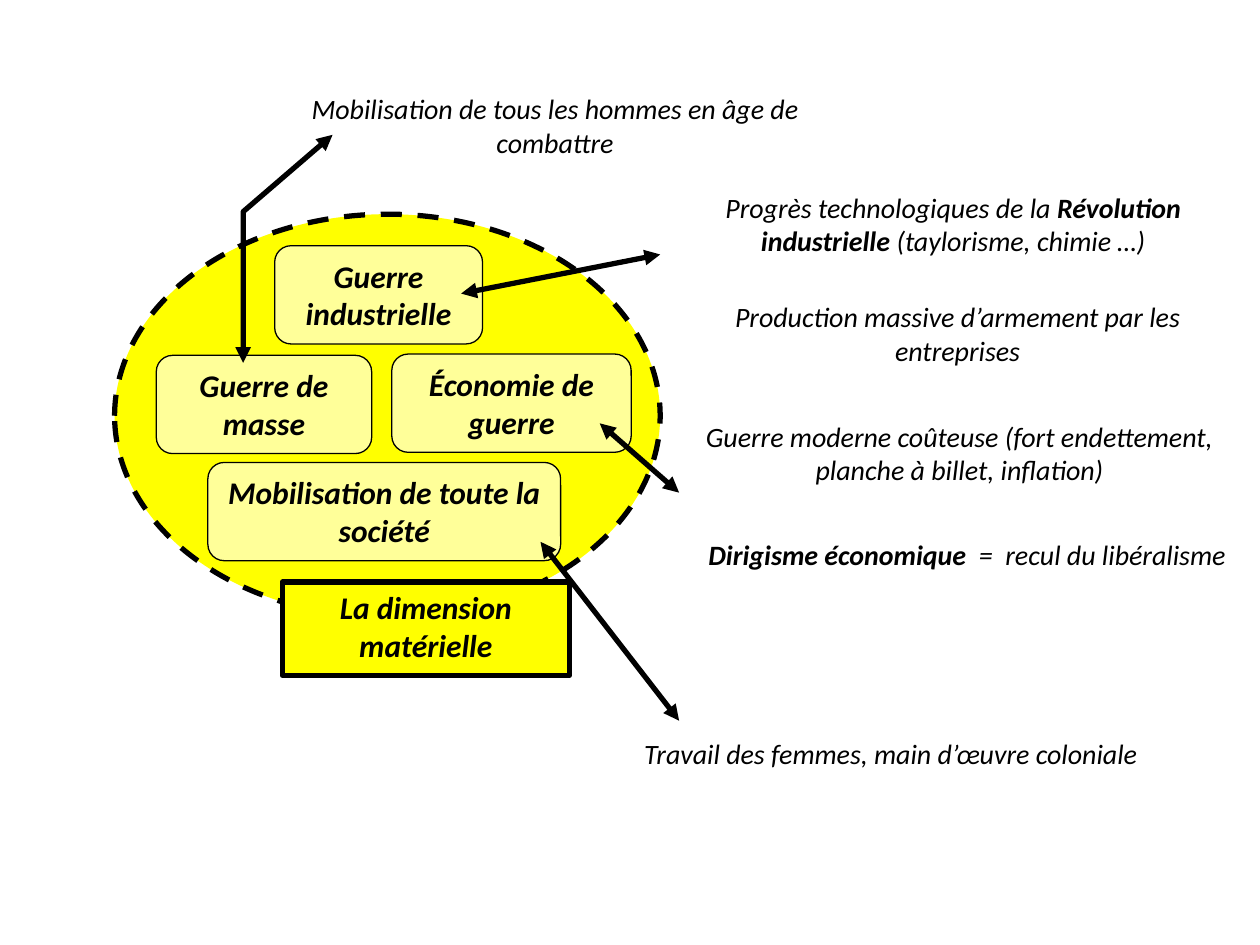
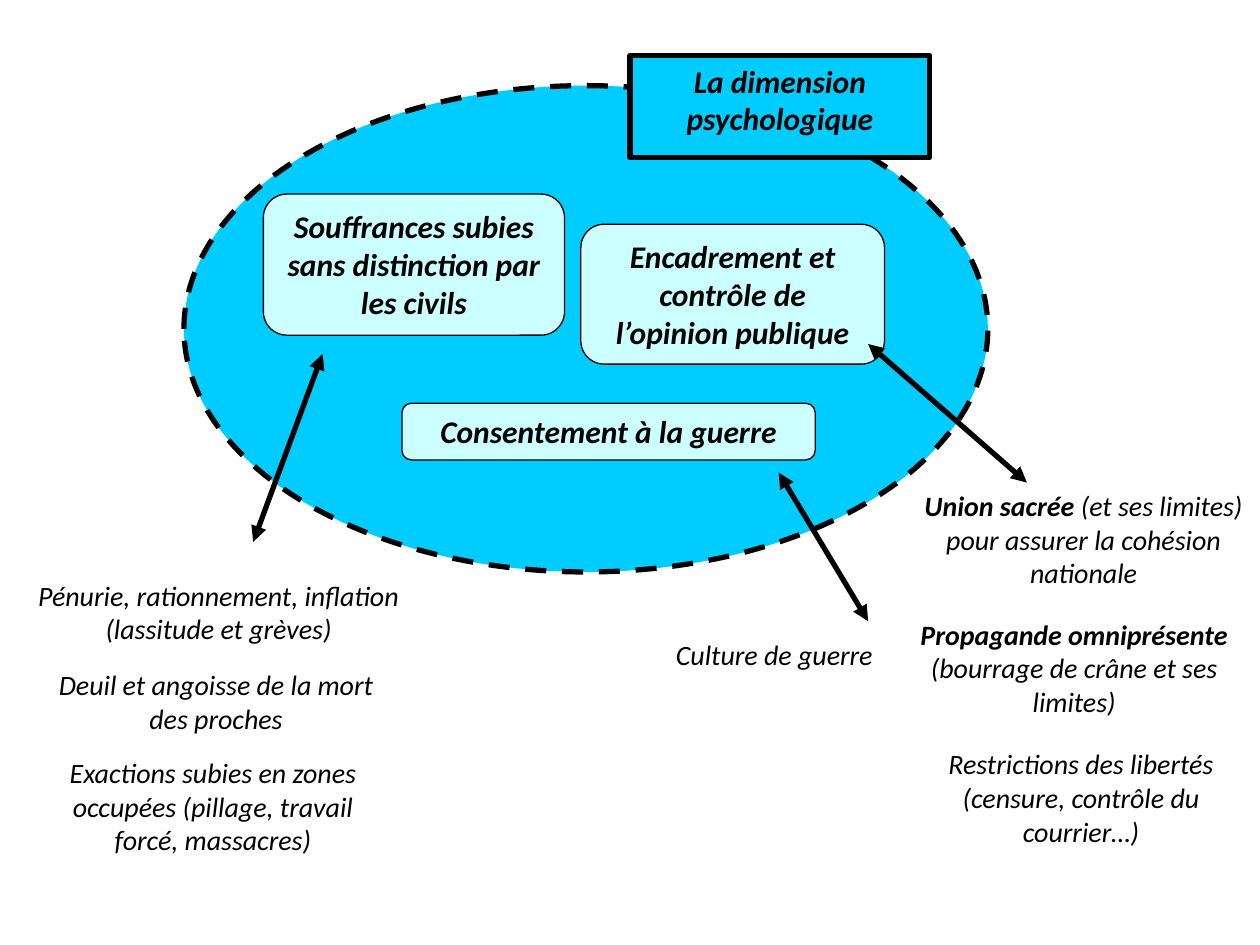
from typing import NamedTuple

from lxml.etree import SubElement
from pptx import Presentation
from pptx.dml.color import RGBColor
from pptx.enum.dml import MSO_LINE_DASH_STYLE as Dash
from pptx.enum.shapes import MSO_CONNECTOR as Connector
from pptx.enum.shapes import MSO_SHAPE as Preset
from pptx.enum.text import MSO_ANCHOR as Anchor
from pptx.enum.text import PP_ALIGN as Align
from pptx.oxml.ns import qn
from pptx.util import Inches, Pt

SLIDE_WIDTH, SLIDE_HEIGHT = Inches(10), Inches(7.5)
COLUMN, ROW = SLIDE_WIDTH / 100, SLIDE_HEIGHT / 75

FONT = "Calibri"
INK = "000000"
THIN, THICK = 0.75, 3
NOTE_SIZE, BOX_SIZE = 16, 18
BOLD_MARK = "**"


class Area(NamedTuple):
    """Left, top, width and height in columns and rows of the grid."""
    left: float
    top: float
    width: float
    height: float

    def lengths(self) -> tuple[int, int, int, int]:
        return (*place(self.left, self.top), *place(self.width, self.height))


class Caption(NamedTuple):
    text: str
    area: Area


class Dimension(NamedTuple):
    """One slide: an oval of themes, its label, and notes tied by arrows."""
    oval: Area
    label: Caption
    strong_fill: str
    pale_fill: str
    themes: list[Caption]
    notes: list[Caption]
    arrows: list[list[tuple[float, float]]]


MATERIAL = Dimension(
    oval=Area(9.1, 17, 43.3, 32),
    label=Caption("La dimension matérielle", Area(22.4, 46.2, 22.8, 7.4)),
    strong_fill="FFFF00",
    pale_fill="FFFF99",
    themes=[
        Caption("Guerre de masse", Area(12.4, 28.2, 17.1, 7.8)),
        Caption("Économie de guerre", Area(31.1, 28.1, 19, 7.8)),
        Caption("Mobilisation de toute la société", Area(16.5, 36.7, 28, 7.8)),
        Caption("Guerre industrielle", Area(21.8, 19.5, 16.5, 7.8)),
    ],
    notes=[
        Caption("Mobilisation de tous les hommes en âge de combattre",
                Area(22.4, 6.8, 43.3, 6.4)),
        Caption("Progrès technologiques de la **Révolution industrielle** "
                "(taylorisme, chimie …)", Area(53.2, 14.6, 44.9, 6.4)),
        Caption("Production massive d’armement par les entreprises",
                Area(52.4, 23.3, 47.2, 6.4)),
        Caption("Guerre moderne coûteuse (fort endettement, planche à billet, "
                "inflation)", Area(53.9, 32.8, 44.5, 6.4)),
        Caption("**Dirigisme économique ** =  recul du libéralisme",
                Area(53.5, 42.2, 46.5, 3.7)),
        Caption("Travail des femmes, main d’œuvre coloniale",
                Area(44.5, 58, 52.4, 3.7)),
    ],
    arrows=[
        [(19.3, 28.8), (19.3, 16.8), (26.4, 10.7)],
        [(42.9, 43), (53.9, 57.2)],
        [(36.6, 23.3), (52.4, 20.2)],
        [(47.6, 33.6), (53.9, 39.1)],
    ],
)

PSYCHOLOGICAL = Dimension(
    oval=Area(14.6, 6.8, 63.8, 38.6),
    label=Caption("La dimension psychologique", Area(50, 4.4, 23.8, 8.1)),
    strong_fill="00CCFF",
    pale_fill="CCFFFF",
    themes=[
        Caption("Encadrement et contrôle de l’opinion publique",
                Area(46.1, 17.8, 24.1, 11.1)),
        Caption("Consentement à la guerre", Area(31.9, 32, 32.8, 4.5)),
        Caption("Souffrances subies sans distinction par les civils",
                Area(20.9, 15.4, 23.9, 11.2)),
    ],
    notes=[
        Caption("Culture de guerre", Area(52.4, 50.1, 18.1, 6.4)),
        Caption("Pénurie, rationnement, inflation (lassitude et grèves)",
                Area(-0.4, 45.4, 35.5, 6.4)),
        Caption("Deuil et angoisse de la mort des proches",
                Area(2, 52.5, 30.3, 6.4)),
        Caption("Exactions subies en zones occupées (pillage, travail forcé, "
                "massacres)", Area(3.5, 59.5, 26.8, 11.7)),
        Caption("**Union sacrée** (et ses limites) pour assurer la cohésion "
                "nationale", Area(72, 38.3, 28, 9)),
        Caption("**Propagande omniprésente **(bourrage de crâne et ses "
                "limites)", Area(70.5, 48.5, 29.5, 9.1)),
        Caption("Restrictions des libertés (censure, contrôle du courrier…)",
                Area(72.8, 58.8, 26, 9)),
    ],
    arrows=[
        [(25.6, 28.1), (20.1, 43)],
        [(61.8, 37.5), (68.9, 49.3)],
        [(68.9, 27.3), (81.5, 38.3)],
    ],
)


def place(columns: float, rows: float) -> tuple[int, int]:
    return round(columns * COLUMN), round(rows * ROW)


def color(value: str) -> RGBColor:
    return RGBColor.from_string(value)


def write(shape, text: str, *, size: float, bold: bool = False) -> None:
    """Fill a shape with centred italic text; marked parts switch the weight."""
    frame = shape.text_frame
    frame.word_wrap = True
    frame.vertical_anchor = Anchor.TOP
    paragraph = frame.paragraphs[0]
    paragraph.alignment = Align.CENTER
    for index, part in enumerate(text.split(BOLD_MARK)):
        if not part:
            continue
        run = paragraph.add_run()
        run.text = part
        run.font.name = FONT
        run.font.size = Pt(size)
        run.font.italic = True
        run.font.bold = bold != (index % 2 == 1)
        run.font.color.rgb = color(INK)


def stroke(shape, width: float) -> None:
    shape.line.color.rgb = color(INK)
    shape.line.width = Pt(width)


def add_filled(slide, preset: Preset, area: Area, fill: str, width: float):
    shape = slide.shapes.add_shape(preset, *area.lengths())
    shape.shadow.inherit = False
    shape.fill.solid()
    shape.fill.fore_color.rgb = color(fill)
    stroke(shape, width)
    return shape


def add_box(slide, preset: Preset, caption: Caption, fill: str,
            width: float) -> None:
    box = add_filled(slide, preset, caption.area, fill, width)
    write(box, caption.text, size=BOX_SIZE, bold=True)


def add_note(slide, note: Caption) -> None:
    box = slide.shapes.add_textbox(*note.area.lengths())
    write(box, note.text, size=NOTE_SIZE)


def add_arrow(slide, points: list[tuple[float, float]]) -> None:
    """Draw a two-headed arrow, straight or bent, through grid points."""
    start, *others = [place(*point) for point in points]
    if len(others) == 1:
        arrow = slide.shapes.add_connector(
            Connector.STRAIGHT, *start, *others[0])
        stroke(arrow, THICK)
        SubElement(arrow.element.spPr, qn("a:effectLst"))
    else:
        builder = slide.shapes.build_freeform(*start)
        builder.add_line_segments(others, close=False)
        arrow = builder.convert_to_shape()
        arrow.shadow.inherit = False
        arrow.fill.background()
        stroke(arrow, THICK)
    line = arrow.element.spPr.find(qn("a:ln"))
    for end in ("a:headEnd", "a:tailEnd"):
        SubElement(line, qn(end), type="triangle")


def add_dimension_slide(presentation, dimension: Dimension) -> None:
    blank_layout = presentation.slide_layouts[6]
    slide = presentation.slides.add_slide(blank_layout)
    oval = add_filled(slide, Preset.OVAL, dimension.oval,
                      dimension.strong_fill, THICK)
    oval.line.dash_style = Dash.DASH
    for theme in dimension.themes:
        add_box(slide, Preset.ROUNDED_RECTANGLE, theme,
                dimension.pale_fill, THIN)
    for note in dimension.notes:
        add_note(slide, note)
    for points in dimension.arrows:
        add_arrow(slide, points)
    add_box(slide, Preset.RECTANGLE, dimension.label,
            dimension.strong_fill, THICK)


def main() -> None:
    presentation = Presentation()
    presentation.slide_width = SLIDE_WIDTH
    presentation.slide_height = SLIDE_HEIGHT
    for dimension in (MATERIAL, PSYCHOLOGICAL):
        add_dimension_slide(presentation, dimension)
    presentation.save("out.pptx")


if __name__ == "__main__":
    main()
